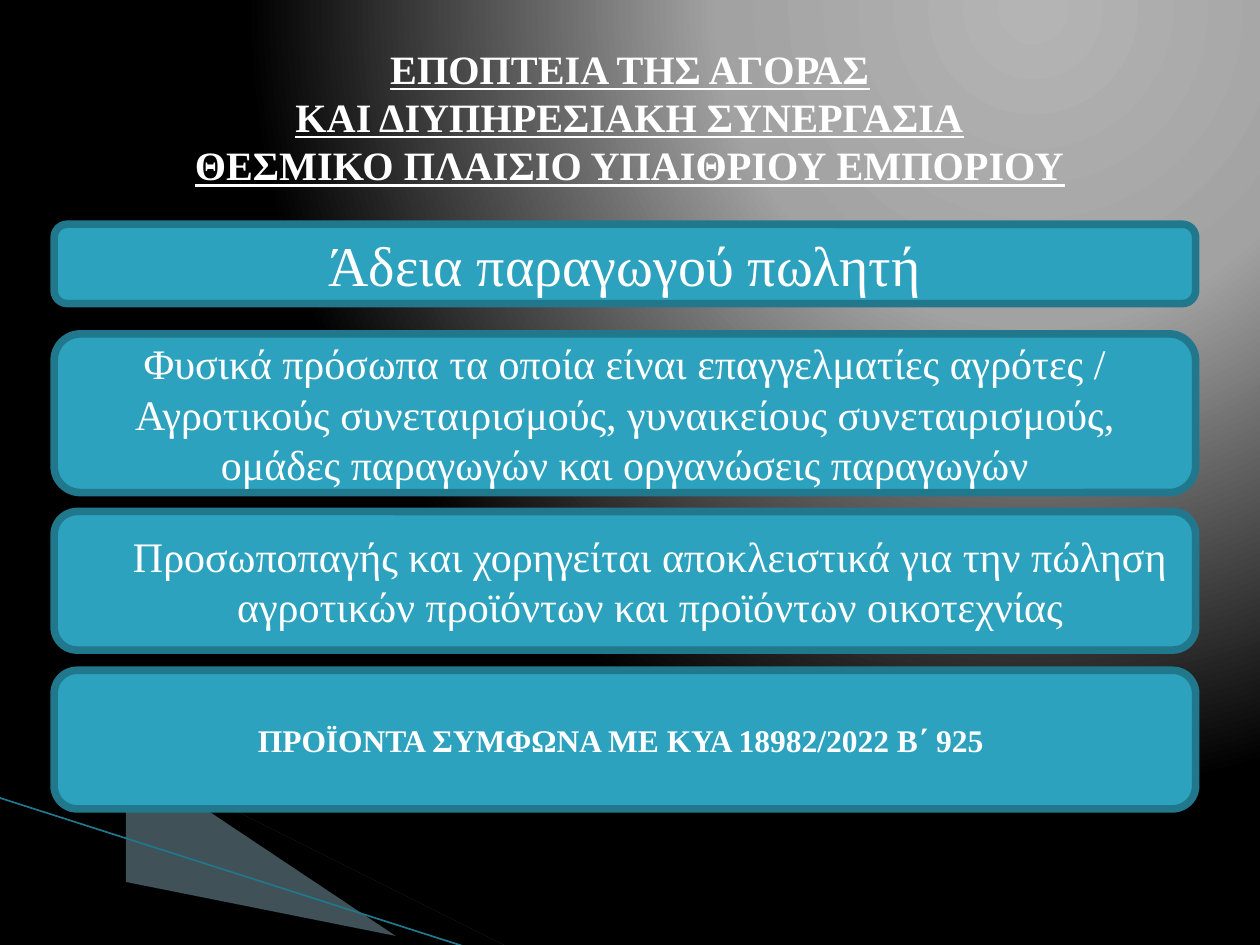
import pptx
import pptx.util
import pptx.oxml
import pptx.oxml.ns
from pptx.dml.color import RGBColor
from pptx.enum.shapes import MSO_CONNECTOR, MSO_SHAPE
from pptx.enum.text import MSO_ANCHOR, PP_ALIGN

THEME = {
    "font": "Times New Roman",
    "text": "FFFFFF", "box": "2DA2BF", "edge": "21788D",
    "wedge": "A0CBDC", "shade": "000000",
    "glow": [(0, "B4B4B4"), (40, "A2A2A2"), (100, "000000")],
    "title": 23, "heading": 32, "body": 24, "note": 18,
    "edge_width": 4.33, "hairline": 0.95,
}
NS = pptx.oxml.ns.nsdecls("a")
qn = pptx.oxml.ns.qn
Inches, Pt = pptx.util.Inches, pptx.util.Pt


def add_text(sp, lines, size, bold=False, underline=False):
    """Fill a shape with one centred paragraph, with a break between lines."""
    tf = sp.text_frame
    tf.word_wrap = True
    tf.vertical_anchor = MSO_ANCHOR.MIDDLE
    p = tf.paragraphs[0]
    p.alignment = PP_ALIGN.CENTER
    for i, line in enumerate(lines):
        if i:
            p.add_line_break()
        r = p.add_run()
        r.text = line
        r.font.name = THEME["font"]
        r.font.size = Pt(size)
        r.font.bold = bold
        r.font.underline = underline
        r.font.color.rgb = RGBColor.from_string(THEME["text"])
    return p


prs = pptx.Presentation()
prs.slide_width, prs.slide_height = Inches(10), Inches(7.5)
s = prs.slides.add_slide(prs.slide_layouts[6])

# Background: a glow centred near the top right
stops = "".join(f'<a:gs pos="{pos * 1000}"><a:srgbClr val="{color}"/></a:gs>'
                for pos, color in THEME["glow"])
glow = pptx.oxml.parse_xml(
    f'<a:gradFill {NS} rotWithShape="1"><a:gsLst>{stops}</a:gsLst>'
    '<a:path path="circle"><a:fillToRect l="65000" t="0" r="0" b="98000"/>'
    '</a:path></a:gradFill>')
s.background.fill.solid()
bg_pr = s.background.fill._xPr
bg_pr.replace(bg_pr.find(qn("a:solidFill")), glow)

# Wedges and hairline in the bottom left corner
wedges = [
    ([(0.55, 6.51), (5.95, 7.51), (4.56, 7.51), (0.55, 6.5)], THEME["wedge"], 40),
    ([(0.53, 6.49), (4.57, 7.51), (3.72, 7.52), (0.54, 6.5)], THEME["shade"], 100),
]
for points, color, opacity in wedges:
    outline = s.shapes.build_freeform(*points[0], scale=Inches(1))
    outline.add_line_segments(points[1:], close=True)
    sp = outline.convert_to_shape()
    sp.shadow.inherit = False
    sp.line.fill.background()
    sp.fill.solid()
    sp.fill.fore_color.rgb = RGBColor.from_string(color)
    if opacity < 100:
        sp.fill._xPr.find(".//" + qn("a:srgbClr")).append(
            pptx.oxml.parse_xml(f'<a:alpha {NS} val="{opacity * 1000}"/>'))

hairline = s.shapes.add_connector(MSO_CONNECTOR.STRAIGHT, Inches(-0.01), Inches(6.33),
                                  Inches(3.71), Inches(7.52))
hairline.line.color.rgb = RGBColor.from_string(THEME["edge"])
hairline.line.width = Pt(THEME["hairline"])
hairline._element.spPr.append(pptx.oxml.parse_xml(f"<a:effectLst {NS}/>"))

# Title
title = s.shapes.add_textbox(Inches(0.5), Inches(0.3), Inches(9), Inches(1.25))
add_text(title, ["ΕΠΟΠΤΕΙΑ ΤΗΣ ΑΓΟΡΑΣ",
                 "ΚΑΙ ΔΙΥΠΗΡΕΣΙΑΚΗ ΣΥΝΕΡΓΑΣΙΑ",
                 "ΘΕΣΜΙΚΟ ΠΛΑΙΣΙΟ ΥΠΑΙΘΡΙΟΥ ΕΜΠΟΡΙΟΥ"],
         THEME["title"], bold=True, underline=True)

# Stacked boxes: top, height, text, size, bold, left indent
COL_LEFT, COL_WIDTH = Inches(0.43), Inches(9.06)
boxes = [
    (1.78, 0.63, "Άδεια παραγωγού πωλητή", THEME["heading"], False, 0),
    (2.65, 1.26, "Φυσικά πρόσωπα τα οποία είναι επαγγελματίες αγρότες / "
                 "Αγροτικούς συνεταιρισμούς, γυναικείους συνεταιρισμούς, "
                 "ομάδες παραγωγών και οργανώσεις παραγωγών", THEME["body"], False, 0),
    (4.06, 1.1, "Προσωποπαγής και χορηγείται αποκλειστικά για την πώληση "
                "αγροτικών προϊόντων και προϊόντων οικοτεχνίας", THEME["body"], False, 0.4),
    (5.32, 1.1, "ΠΡΟΪΟΝΤΑ ΣΥΜΦΩΝΑ ΜΕ ΚΥΑ 18982/2022 Β΄ 925 ", THEME["note"], True, 0),
]
for top, height, text, size, bold, indent in boxes:
    sp = s.shapes.add_shape(MSO_SHAPE.ROUNDED_RECTANGLE, COL_LEFT, Inches(top),
                            COL_WIDTH, Inches(height))
    sp.shadow.inherit = False
    sp.fill.solid()
    sp.fill.fore_color.rgb = RGBColor.from_string(THEME["box"])
    sp.line.color.rgb = RGBColor.from_string(THEME["edge"])
    sp.line.width = Pt(THEME["edge_width"])
    p = add_text(sp, [text], size, bold)
    if indent:
        p._p.get_or_add_pPr().set("marL", str(Inches(indent)))

prs.save("out.pptx")
